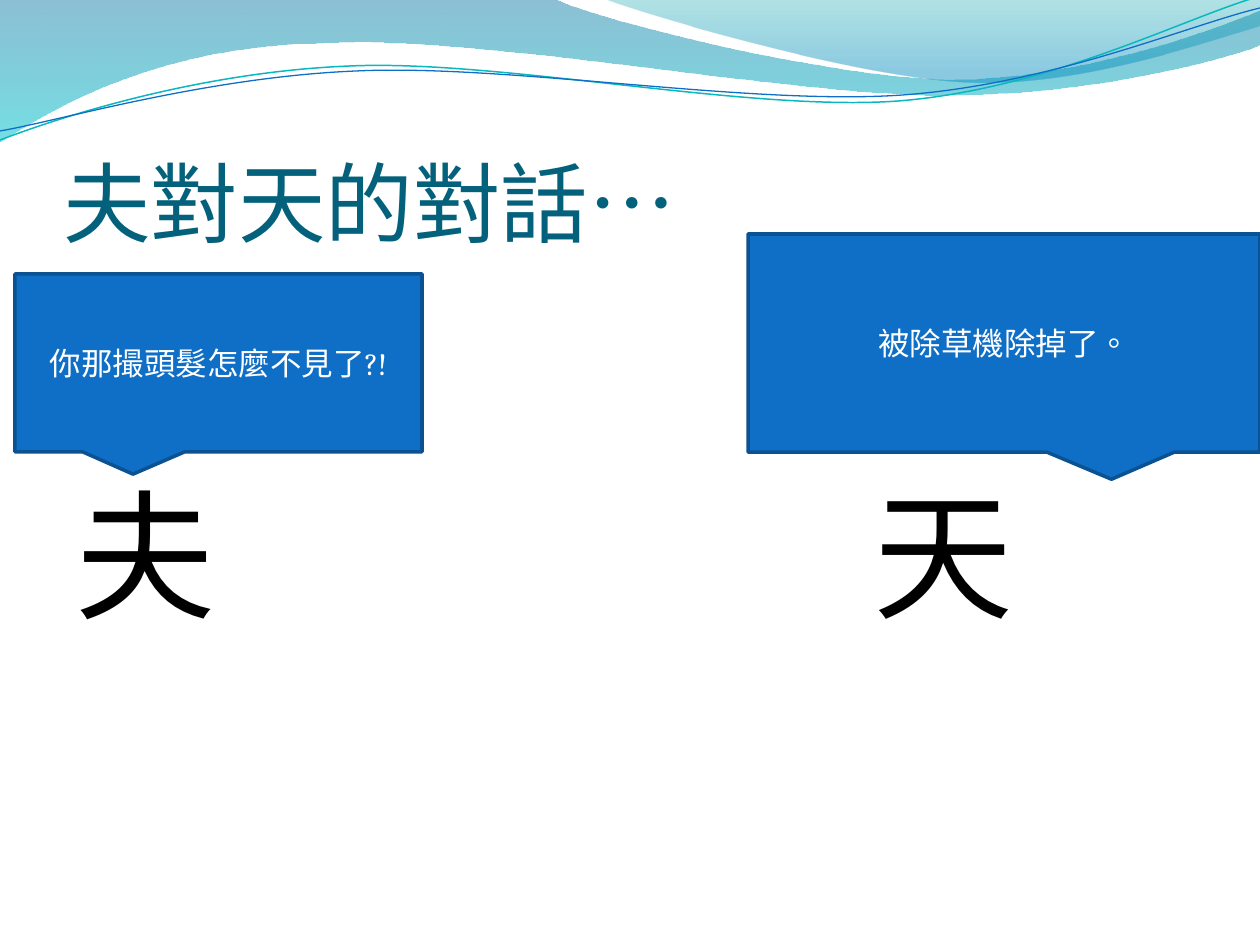
from dataclasses import dataclass

from lxml import etree
from pptx import Presentation
from pptx import util as u
from pptx.dml.color import RGBColor
from pptx.enum import lang, shapes, text
from pptx.oxml import ns

PX = 914400 / 126

Point = tuple[int, int]
Segment = tuple[Point, ...]


@dataclass(frozen=True)
class Theme:
    title_font: str = "Calibri"
    body_font: str = "Cambria"
    title_size: int = 50
    body_size: int = 80
    callout_size: int = 18
    title: str = "04617B"
    body: str = "000000"
    callout_text: str = "FFFFFF"
    callout_fill: str = "0F6FC6"
    callout_line: str = "0B5292"


@dataclass(frozen=True)
class Stop:
    position: float
    color: str
    opacity: int


@dataclass(frozen=True)
class Wave:
    """Each segment holds one point for a line or three for a Bezier curve."""
    start: Point
    segments: tuple[Segment, ...]
    stops: tuple[Stop, ...] = ()
    line: str = ""
    width: float = 0


@dataclass(frozen=True)
class Callout:
    left: int
    top: int
    width: int
    height: int
    tip: float
    words: str


THEME = Theme()

WAVES = (
    Wave((0, 0), (
        ((554, -1),),
        ((600, 21), (837, 79), (955, 79)),
        ((1074, 79), (1207, 33), (1260, 11)),
        ((1261, 45),),
        ((1239, 55), (1096, 96), (940, 95)),
        ((784, 95), (481, 35), (324, 43)),
        ((163, 45), (58, 105), (-1, 142)),
    ), stops=(Stop(0, "0074A1", 45), Stop(1, "00C6CF", 55))),
    Wave((604, -1), (
        ((641, 14), (859, 78), (969, 82)),
        ((1079, 87), (1211, 40), (1260, 26)),
        ((1260, 0),),
    ), stops=(Stop(0, "00A1A9", 30), Stop(0.8, "008BBF", 45))),
    Wave((0, 140), (
        ((60, 117), (199, 72), (349, 66)),
        ((498, 59), (747, 112), (898, 101)),
        ((1049, 89), (1182, 19), (1257, -3)),
    ), line="0AB8BF", width=0.85),
    Wave((0, 131), (
        ((59, 121), (207, 77), (357, 71)),
        ((508, 64), (752, 106), (903, 95)),
        ((1053, 84), (1186, 26), (1260, 8)),
    ), line="0F6FC6", width=0.75),
)

CALLOUTS = (
    Callout(15, 274, 407, 178, -0.21, "你那撮頭髮怎麼不見了?!"),
    Callout(748, 234, 512, 218, 0.21, "被除草機除掉了。"),
)


def px(length: int) -> u.Emu:
    return u.Emu(round(length * PX))


def rgb(color: str) -> RGBColor:
    return RGBColor.from_string(color)


def add_span(para, words: str, size: int, font: str, color: str):
    span = para.add_run()
    span.text = words
    span.font.size = u.Pt(size)
    span.font.name = font
    span.font.color.rgb = rgb(color)
    span.font.language_id = lang.MSO_LANGUAGE_ID.TRADITIONAL_CHINESE
    return span


def bend(shape, segments: tuple[Segment, ...]) -> None:
    """Join the straight steps of each three-point segment into one curve."""
    steps = iter(shape.element.findall(".//" + ns.qn("a:lnTo")))
    for segment in segments:
        group = [next(steps) for _ in segment]
        if len(group) == 3:
            curve = etree.Element(ns.qn("a:cubicBezTo"))
            group[0].addprevious(curve)
            for step in group:
                curve.append(step[0])
                step.getparent().remove(step)


def add_wave(page, wave: Wave) -> None:
    builder = page.shapes.build_freeform(px(wave.start[0]), px(wave.start[1]))
    builder.add_line_segments(
        [(px(x), px(y)) for segment in wave.segments for x, y in segment],
        close=bool(wave.stops))
    shape = builder.convert_to_shape()
    bend(shape, wave.segments)
    shape.shadow.inherit = False
    if not wave.stops:
        shape.fill.background()
        shape.line.color.rgb = rgb(wave.line)
        shape.line.width = u.Pt(wave.width)
        return
    shape.line.fill.background()
    shape.fill.gradient()
    shape.fill.gradient_angle = 270
    for target, stop in zip(shape.fill.gradient_stops, wave.stops):
        target.position = stop.position
        target.color.rgb = rgb(stop.color)
    colors = shape.element.spPr.findall(".//" + ns.qn("a:srgbClr"))
    for color, stop in zip(colors, wave.stops):
        etree.SubElement(color, ns.qn("a:alpha"), val=str(stop.opacity * 1000))


def place(box, left: int, top: int, width: int, height: int) -> None:
    """Position a placeholder and bring it in front of the waves."""
    box.left, box.top, box.width, box.height = map(px, (left, top, width, height))
    box.element.getparent().append(box.element)
    box.text_frame.auto_size = text.MSO_AUTO_SIZE.NONE


def fill_title(box) -> None:
    place(box, 63, 97, 1134, 157)
    frame = box.text_frame
    frame.vertical_anchor = text.MSO_ANCHOR.BOTTOM
    frame.margin_left = frame.margin_right = frame.margin_bottom = 0
    para = frame.paragraphs[0]
    para.alignment = text.PP_ALIGN.LEFT
    add_span(para, "夫對天的對話…", THEME.title_size, THEME.title_font, THEME.title)


def fill_body(box) -> None:
    """Write both characters on one line, set apart by wide letter spacing."""
    place(box, 63, 267, 1134, 605)
    frame = box.text_frame
    frame.margin_top = px(202)
    para = frame.paragraphs[0]
    para.space_before = u.Pt(0)
    span = add_span(para, "夫 天", THEME.body_size, THEME.body_font, THEME.body)
    span.font._element.set("spc", "17900")
    props = para._p.get_or_add_pPr()
    props.set("marL", "0")
    props.set("indent", "0")
    etree.SubElement(props, ns.qn("a:buNone"))


def add_callout(page, callout: Callout) -> None:
    box = page.shapes.add_shape(
        shapes.MSO_SHAPE.RECTANGULAR_CALLOUT,
        px(callout.left), px(callout.top), px(callout.width), px(callout.height))
    box.adjustments[0] = callout.tip
    box.shadow.inherit = False
    box.fill.solid()
    box.fill.fore_color.rgb = rgb(THEME.callout_fill)
    box.line.color.rgb = rgb(THEME.callout_line)
    box.line.width = u.Pt(2)
    box.text_frame.word_wrap = True
    box.text_frame.vertical_anchor = text.MSO_ANCHOR.MIDDLE
    para = box.text_frame.paragraphs[0]
    para.alignment = text.PP_ALIGN.CENTER
    add_span(para, callout.words, THEME.callout_size, THEME.body_font, THEME.callout_text)


def main() -> None:
    deck = Presentation()
    deck.slide_width, deck.slide_height = px(1260), px(945)
    page = deck.slides.add_slide(deck.slide_layouts[1])
    for wave in WAVES:
        add_wave(page, wave)
    fill_title(page.shapes.title)
    fill_body(page.placeholders[1])
    for callout in CALLOUTS:
        add_callout(page, callout)
    deck.save("out.pptx")


if __name__ == "__main__":
    main()
